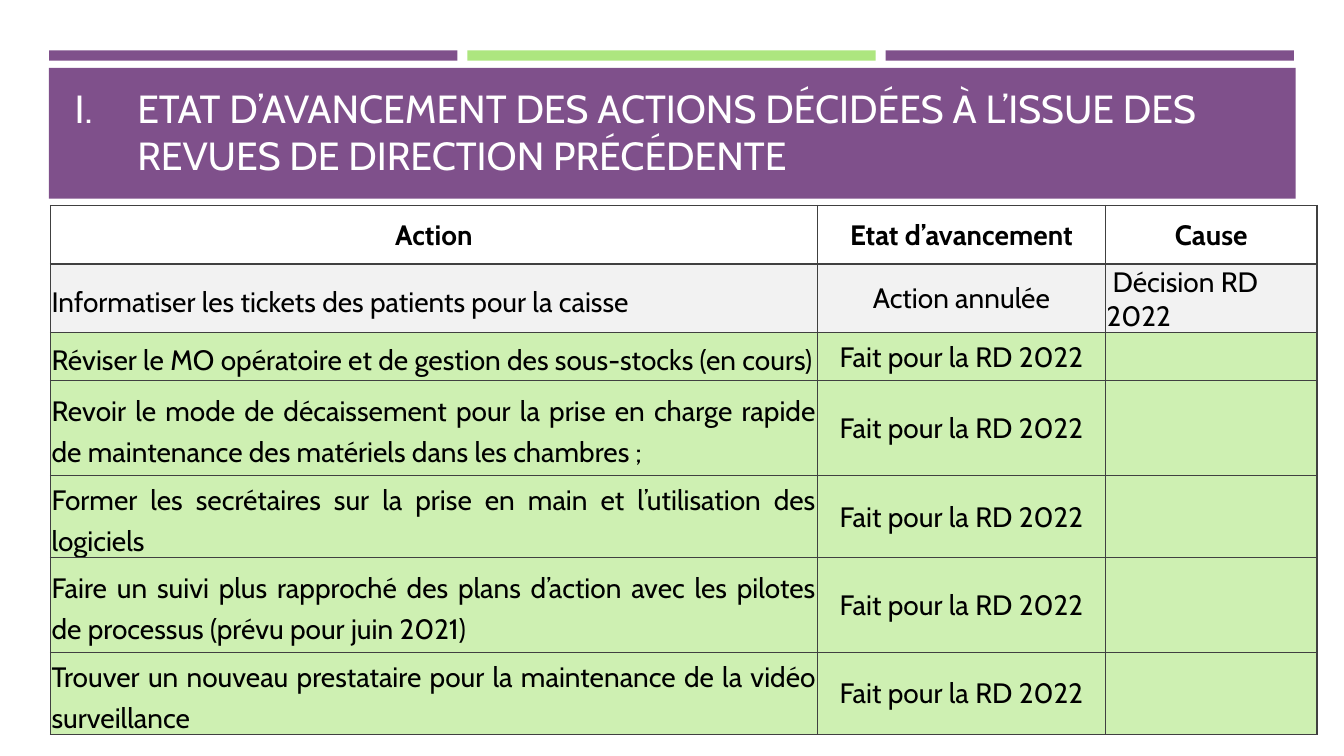
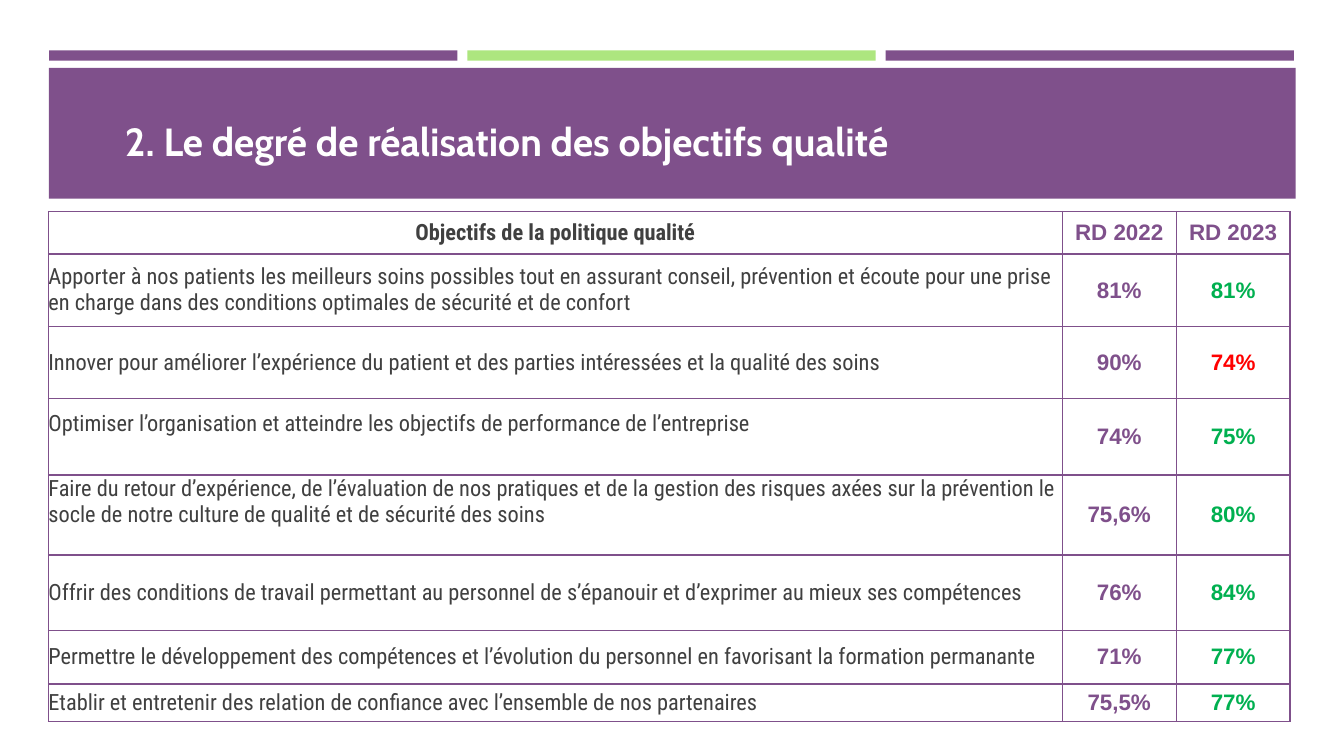
from dataclasses import dataclass, replace

import pptx
import pptx.dml.color
import pptx.enum.shapes
import pptx.enum.text
import pptx.oxml.ns
import pptx.util
from lxml import etree

Cm = pptx.util.Cm
Pt = pptx.util.Pt
RGBColor = pptx.dml.color.RGBColor
ALIGN = pptx.enum.text.PP_ALIGN
ANCHOR = pptx.enum.text.MSO_ANCHOR
qn = pptx.oxml.ns.qn

# Colours
PURPLE = RGBColor(0x7F, 0x50, 0x8B)
LIME = RGBColor(0xAD, 0xE6, 0x7F)
PALE_GREEN = RGBColor(0xCE, 0xF0, 0xB2)
PALE_GREY = RGBColor(0xF2, 0xF2, 0xF2)
DARK_GREY = RGBColor(0x40, 0x40, 0x40)
GREEN = RGBColor(0x00, 0xB0, 0x50)
RED = RGBColor(0xFF, 0x00, 0x00)
BLACK = RGBColor(0, 0, 0)
WHITE = RGBColor(0xFF, 0xFF, 0xFF)


@dataclass(frozen=True)
class Look:
    font: str
    size: int
    color: RGBColor
    bold: bool = False
    align: ALIGN = ALIGN.LEFT
    spacing: float = 1.0
    indent: float = 0


@dataclass(frozen=True)
class Entry:
    text: str
    look: Look
    fill: RGBColor = WHITE
    bottom: float = 0


@dataclass(frozen=True)
class Grid:
    left: float
    top: float
    cols: list[float]
    heights: list[float]
    border: RGBColor
    head_rule: float
    margin: float


# Text styles
TITLE = Look("Cabin", 28, WHITE)
STATUS = Look("Cabin", 20, BLACK, align=ALIGN.CENTER)
ACTION = replace(STATUS, align=ALIGN.JUSTIFY, spacing=1.2)
CAUSE = replace(STATUS, align=ALIGN.LEFT, indent=0.15)
ACTION_HEAD = replace(STATUS, bold=True)
GOAL = Look("Roboto Condensed", 16, DARK_GREY)
GOAL_HEAD = replace(GOAL, bold=True, align=ALIGN.CENTER)
SCORE = Look("Arial", 16, PURPLE, True, ALIGN.CENTER)

# Content
DONE = "Fait pour la RD 2022"
ACTIONS = [
    ("Informatiser les tickets des patients pour la caisse",
     "Action annulée", "Décision RD 2022", PALE_GREY),
    ("Réviser le MO opératoire et de gestion des sous-stocks (en cours)",
     DONE, "", PALE_GREEN),
    ("Revoir le mode de décaissement pour la prise en charge rapide de "
     "maintenance des matériels dans les chambres ;", DONE, "", PALE_GREEN),
    ("Former les secrétaires sur la prise en main et l’utilisation des "
     "logiciels", DONE, "", PALE_GREEN),
    ("Faire un suivi plus rapproché des plans d’action avec les pilotes de "
     "processus (prévu pour juin 2021)", DONE, "", PALE_GREEN),
    ("Trouver un nouveau prestataire pour la maintenance de la vidéo "
     "surveillance", DONE, "", PALE_GREEN),
]
# Goal, score 2022, score 2023, colour of the latter, space below the goal
GOALS = [
    ("Apporter à nos patients les meilleurs soins possibles tout en assurant "
     "conseil, prévention et écoute pour une prise en charge dans des "
     "conditions optimales de sécurité et de confort",
     "81%", "81%", GREEN, 0),
    ("Innover pour améliorer l’expérience du patient et des parties "
     "intéressées et la qualité des soins", "90%", "74%", RED, 0),
    ("Optimiser l’organisation et atteindre les objectifs de performance de "
     "l’entreprise", "74%", "75%", GREEN, 0.66),
    ("Faire du retour d’expérience, de l’évaluation de nos pratiques et de la "
     "gestion des risques axées sur la prévention le socle de notre culture "
     "de qualité et de sécurité des soins", "75,6%", "80%", GREEN, 0.66),
    ("Offrir des conditions de travail permettant au personnel de s’épanouir "
     "et d’exprimer au mieux ses compétences", "76%", "84%", GREEN, 0),
    ("Permettre le développement des compétences et l’évolution du personnel "
     "en favorisant la formation permanante", "71%", "77%", GREEN, 0),
    ("Etablir et entretenir des relation de confiance avec l’ensemble de nos "
     "partenaires", "75,5%", "77%", GREEN, 0),
]


def style(p, look: Look) -> None:
    p.alignment = look.align
    p.line_spacing = look.spacing
    if look.indent:
        p._p.get_or_add_pPr().set("indent", str(Cm(look.indent)))
    p.font.name = look.font
    p.font.size = Pt(look.size)
    p.font.bold = look.bold
    p.font.color.rgb = look.color


def add_rect(s, left: float, top: float, width: float, height: float,
             color: RGBColor) -> None:
    sp = s.shapes.add_shape(pptx.enum.shapes.MSO_SHAPE.RECTANGLE,
                            Cm(left), Cm(top), Cm(width), Cm(height))
    sp.shadow.inherit = False
    sp.fill.solid()
    sp.fill.fore_color.rgb = color
    sp.line.fill.background()


def add_slide(prs):
    """Blank slide with the three bars and the title band."""
    s = prs.slides.add_slide(prs.slide_layouts[6])
    for i, color in enumerate((PURPLE, LIME, PURPLE)):
        add_rect(s, 1.24 + i * 10.54, 1.27, 10.29, 0.26, color)
    add_rect(s, 1.23, 1.71, 31.42, 3.3, PURPLE)
    return s


def add_title(s, text: str, left: float, top: float, width: float,
              height: float, anchor: ANCHOR, look: Look):
    tf = s.shapes.add_textbox(Cm(left), Cm(top), Cm(width),
                              Cm(height)).text_frame
    tf.word_wrap = True
    tf.vertical_anchor = anchor
    p = tf.paragraphs[0]
    p.text = text
    return p


def set_borders(cell, color: RGBColor, top: float, bottom: float) -> None:
    tc_pr = cell._tc.get_or_add_tcPr()
    sides = {"lnL": 1, "lnR": 1, "lnT": top, "lnB": bottom}
    for i, (side, width) in enumerate(sides.items()):
        ln = etree.Element(qn(f"a:{side}"), w=str(Pt(width)))
        fill = etree.SubElement(ln, qn("a:solidFill"))
        etree.SubElement(fill, qn("a:srgbClr"), val=str(color))
        tc_pr.insert(i, ln)


def add_grid(s, grid: Grid, rows: list[list[Entry]]) -> None:
    table = s.shapes.add_table(
        len(rows), len(grid.cols), Cm(grid.left), Cm(grid.top),
        Cm(sum(grid.cols)), Cm(sum(grid.heights))).table
    table.first_row = table.horz_banding = False
    for col, width in zip(table.columns, grid.cols):
        col.width = Cm(width)
    for i, (row, height, entries) in enumerate(
            zip(table.rows, grid.heights, rows)):
        row.height = Cm(height)
        for cell, entry in zip(row.cells, entries):
            cell.fill.solid()
            cell.fill.fore_color.rgb = entry.fill
            set_borders(cell, grid.border,
                        top=grid.head_rule if i == 1 else 1,
                        bottom=grid.head_rule if i == 0 else 1)
            cell.vertical_anchor = ANCHOR.MIDDLE
            cell.margin_left = cell.margin_right = Cm(grid.margin)
            cell.margin_top = Cm(grid.margin)
            cell.margin_bottom = Cm(entry.bottom)
            p = cell.text_frame.paragraphs[0]
            p.text = entry.text
            style(p, entry.look)


def build_actions(prs) -> None:
    s = add_slide(prs)
    p = add_title(s, "ETAT D’AVANCEMENT DES ACTIONS DÉCIDÉES À L’ISSUE DES "
                  "REVUES DE DIRECTION PRÉCÉDENTE",
                  1.63, 1.65, 30.63, 3.32, ANCHOR.MIDDLE, TITLE)
    # Roman numbering with a hanging indent
    p_pr = p._p.get_or_add_pPr()
    p_pr.set("marL", str(Cm(1.58)))
    etree.SubElement(p_pr, qn("a:buFont"), typeface=TITLE.font)
    etree.SubElement(p_pr, qn("a:buAutoNum"), type="romanUcPeriod")
    style(p, replace(TITLE, indent=-1.58))

    rows = [[Entry(text, ACTION_HEAD)
             for text in ("Action", "Etat d’avancement", "Cause")]]
    rows += [[Entry(action, ACTION, fill), Entry(status, STATUS, fill),
              Entry(cause, CAUSE, fill)]
             for action, status, cause, fill in ACTIONS]
    add_grid(s, Grid(1.27, 5.18, [19.33, 7.26, 5.33],
                     [1.47, 1.22, 1.22, 2.39, 1.22, 2.39, 1.22],
                     DARK_GREY, 1, 0.03), rows)


def build_goals(prs) -> None:
    s = add_slide(prs)
    rows = [[Entry("Objectifs de la politique qualité", GOAL_HEAD),
             Entry("RD 2022", SCORE), Entry("RD 2023", SCORE)]]
    rows += [[Entry(goal, GOAL, bottom=bottom), Entry(before, SCORE),
              Entry(after, replace(SCORE, color=color))]
             for goal, before, after, color, bottom in GOALS]
    add_grid(s, Grid(1.22, 5.33, [25.55, 2.87, 2.87],
                     [1.07, 1.83, 1.81, 1.93, 1.99, 1.9, 1.35, 0.94],
                     PURPLE, 2, 0), rows)
    p = add_title(s, "2. Le degré de réalisation des objectifs qualité",
                  2.9, 0.53, 29.41, 3.73, ANCHOR.BOTTOM, TITLE)
    style(p, replace(TITLE, bold=True))


def main() -> None:
    prs = pptx.Presentation()
    prs.slide_width = Cm(33.87)
    prs.slide_height = Cm(19.05)
    build_actions(prs)
    build_goals(prs)
    prs.save("out.pptx")


if __name__ == "__main__":
    main()
